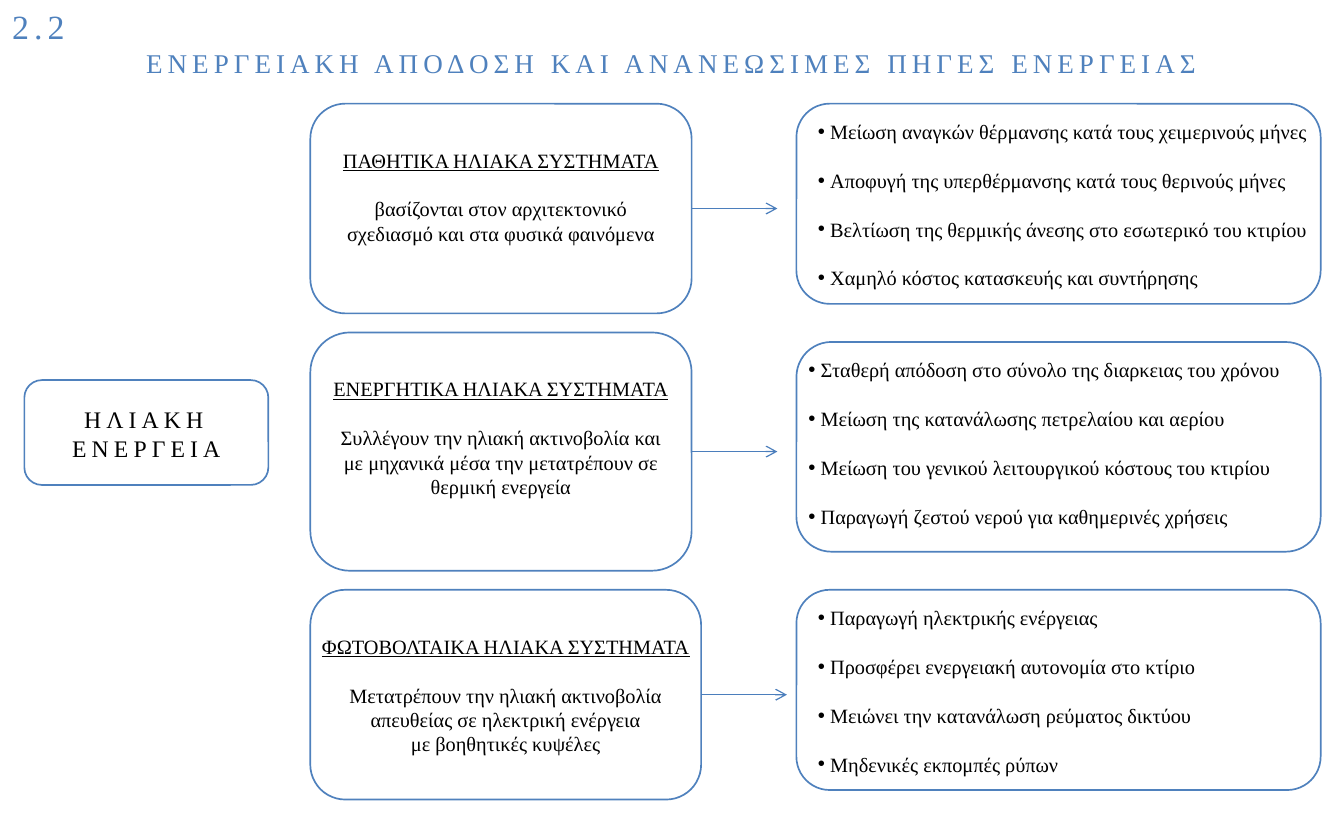
from lxml import etree
from pptx import Presentation
from pptx import util as u
from pptx.dml.color import RGBColor
from pptx.enum import shapes, text
from pptx.oxml.ns import qn

SLIDE_W, SLIDE_H = 11.02, 6.69
CELL = SLIDE_W / 141                # side of a square grid cell, inches
ORIGIN_X, ORIGIN_Y = 0.2, 0.85      # where column 0 and row 0 start
COLORS = {"accent": "4F81BD", "arrow": "4B7EBC", "ink": "000000"}
FONT = "Times New Roman"
BLANK_LINE = 14.4                   # points between separate paragraphs
SYSTEM_COL, BENEFIT_COL, BENEFIT_COLS, ARROW_COLS = 30, 81, 55, 9

# Boxes are (column, row, columns, rows); margins are in columns
SYSTEMS = [
    dict(
        box=(SYSTEM_COL, 0, 40, 22), margin=1,
        heading="ΠΑΘΗΤΙΚΑ ΗΛΙΑΚΑ ΣΥΣΤΗΜΑΤΑ",
        lines=["βασίζονται στον αρχιτεκτονικό σχεδιασμό και στα φυσικά φαινόμενα"],
        benefit_box=(BENEFIT_COL, 0, BENEFIT_COLS, 21), benefit_margin=1,
        benefits=["Μείωση αναγκών θέρμανσης κατά τους χειμερινούς μήνες",
                  "Αποφυγή της υπερθέρμανσης κατά τους θερινούς μήνες",
                  "Βελτίωση της θερμικής άνεσης στο εσωτερικό του κτιρίου",
                  "Χαμηλό κόστος κατασκευής και συντήρησης"]),
    dict(
        box=(SYSTEM_COL, 24, 40, 25), margin=1,
        heading="ΕΝΕΡΓΗΤΙΚΑ ΗΛΙΑΚΑ ΣΥΣΤΗΜΑΤΑ",
        lines=["Συλλέγουν την ηλιακή ακτινοβολία και με μηχανικά μέσα "
               "την μετατρέπουν σε θερμική ενεργεία"],
        benefit_box=(BENEFIT_COL, 25, BENEFIT_COLS, 22), benefit_margin=0,
        benefits=["Σταθερή απόδοση στο σύνολο της διαρκειας του χρόνου",
                  "Μείωση της κατανάλωσης πετρελαίου και αερίου",
                  "Μείωση του γενικού λειτουργικού κόστους του κτιρίου",
                  "Παραγωγή ζεστού νερού για καθημερινές χρήσεις"]),
    dict(
        box=(SYSTEM_COL, 51, 41, 22), margin=-2,
        heading="ΦΩΤΟΒΟΛΤΑΙΚΑ ΗΛΙΑΚΑ ΣΥΣΤΗΜΑΤΑ",
        lines=["Μετατρέπουν την ηλιακή ακτινοβολία",
               "απευθείας σε ηλεκτρική ενέργεια",
               "με βοηθητικές κυψέλες"],
        benefit_box=(BENEFIT_COL, 51, BENEFIT_COLS, 21), benefit_margin=1,
        benefits=["Παραγωγή ηλεκτρικής ενέργειας",
                  "Προσφέρει ενεργειακή αυτονομία στο κτίριο",
                  "Μειώνει την κατανάλωση ρεύματος δικτύου",
                  "Μηδενικές εκπομπές ρύπων"]),
]


def grid(col, row, cols, rows):
    """Turn a grid box into left, top, width and height."""
    return (u.Inches(ORIGIN_X + col * CELL), u.Inches(ORIGIN_Y + row * CELL),
            u.Inches(cols * CELL), u.Inches(rows * CELL))


def add_frame(slide, place):
    frame = slide.shapes.add_textbox(*place).text_frame
    frame.word_wrap = True
    return frame


def write(frame, words, size=12, color="ink", align="CENTER", underline=False,
          tracking=0, before=0, bullet=False):
    """Add one formatted paragraph to a text frame."""
    paragraph = frame.paragraphs[0]
    if paragraph.runs:
        paragraph = frame.add_paragraph()
    if bullet:
        props = paragraph._p.get_or_add_pPr()
        indent = u.Inches(0.1)
        props.set("marL", str(indent))
        props.set("indent", str(-indent))
        etree.SubElement(props, qn("a:buFont")).set("typeface", "Arial")
        etree.SubElement(props, qn("a:buChar")).set("char", "•")
    paragraph.alignment = getattr(text.PP_ALIGN, align)
    if before:
        paragraph.space_before = u.Pt(before)
    run = paragraph.add_run()
    run.text = words
    run.font.name, run.font.size = FONT, u.Pt(size)
    run.font.underline = underline
    run.font.color.rgb = RGBColor.from_string(COLORS[color])
    if tracking:
        run._r.get_or_add_rPr().set("spc", str(tracking * 100))


def add_card(slide, box):
    card = slide.shapes.add_shape(shapes.MSO_SHAPE.ROUNDED_RECTANGLE, *grid(*box))
    card.shadow.inherit = False
    card.fill.background()
    card.line.color.rgb = RGBColor.from_string(COLORS["accent"])
    card.line.width = u.Pt(1)
    return card


def add_title(slide):
    frame = add_frame(slide, (0, 0, u.Inches(SLIDE_W), u.Inches(SLIDE_H * 0.11)))
    write(frame, "2.2", size=20, color="accent", align="LEFT", tracking=3)
    write(frame, "ΕΝΕΡΓΕΙΑΚΗ ΑΠΟΔΟΣΗ ΚΑΙ ΑΝΑΝΕΩΣΙΜΕΣ ΠΗΓΕΣ ΕΝΕΡΓΕΙΑΣ",
          size=16, color="accent", tracking=3)


def add_topic(slide, box):
    add_card(slide, box)
    col, row, cols, rows = box
    frame = add_frame(slide, grid(col, row + 2, cols, rows - 4))
    write(frame, "ΗΛΙΑΚΗ ΕΝΕΡΓΕΙΑ", size=14, tracking=3)


def add_system(slide, box, margin, heading, lines):
    card = add_card(slide, box)
    col, row, cols, rows = box
    frame = add_frame(slide, grid(col + margin, row + 4, cols - 2 * margin, rows - 8))
    write(frame, heading, underline=True)
    for number, line in enumerate(lines):
        write(frame, line, before=0 if number else BLANK_LINE)
    return card


def add_benefits(slide, box, margin, benefits):
    add_card(slide, box)
    col, row, cols, rows = box
    frame = add_frame(slide, grid(col + margin, row + 1, cols - margin, rows - 2))
    for number, benefit in enumerate(benefits):
        write(frame, benefit, align="JUSTIFY", bullet=True,
              before=BLANK_LINE if number else 0)


def add_arrow(slide, card):
    """Draw an arrow from the middle of the card's right side."""
    start = card.left + card.width
    middle = card.top + card.height // 2
    arrow = slide.shapes.add_connector(
        shapes.MSO_CONNECTOR.STRAIGHT, start, middle,
        start + u.Inches(ARROW_COLS * CELL), middle)
    arrow.begin_connect(card, 3)
    arrow.line.color.rgb = RGBColor.from_string(COLORS["arrow"])
    arrow.line.width = u.Pt(0.75)
    etree.SubElement(arrow.line._get_or_add_ln(), qn("a:tailEnd")).set("type", "arrow")
    etree.SubElement(arrow._element.spPr, qn("a:effectLst"))


def main():
    deck = Presentation()
    deck.slide_width, deck.slide_height = u.Inches(SLIDE_W), u.Inches(SLIDE_H)
    slide = deck.slides.add_slide(deck.slide_layouts[6])
    add_title(slide)
    add_topic(slide, (0, 29, 25.6, 11))
    # One row per solar system: description, arrow, benefits
    for system in SYSTEMS:
        card = add_system(slide, system["box"], system["margin"],
                          system["heading"], system["lines"])
        add_benefits(slide, system["benefit_box"], system["benefit_margin"],
                     system["benefits"])
        add_arrow(slide, card)
    deck.save("out.pptx")


if __name__ == "__main__":
    main()
